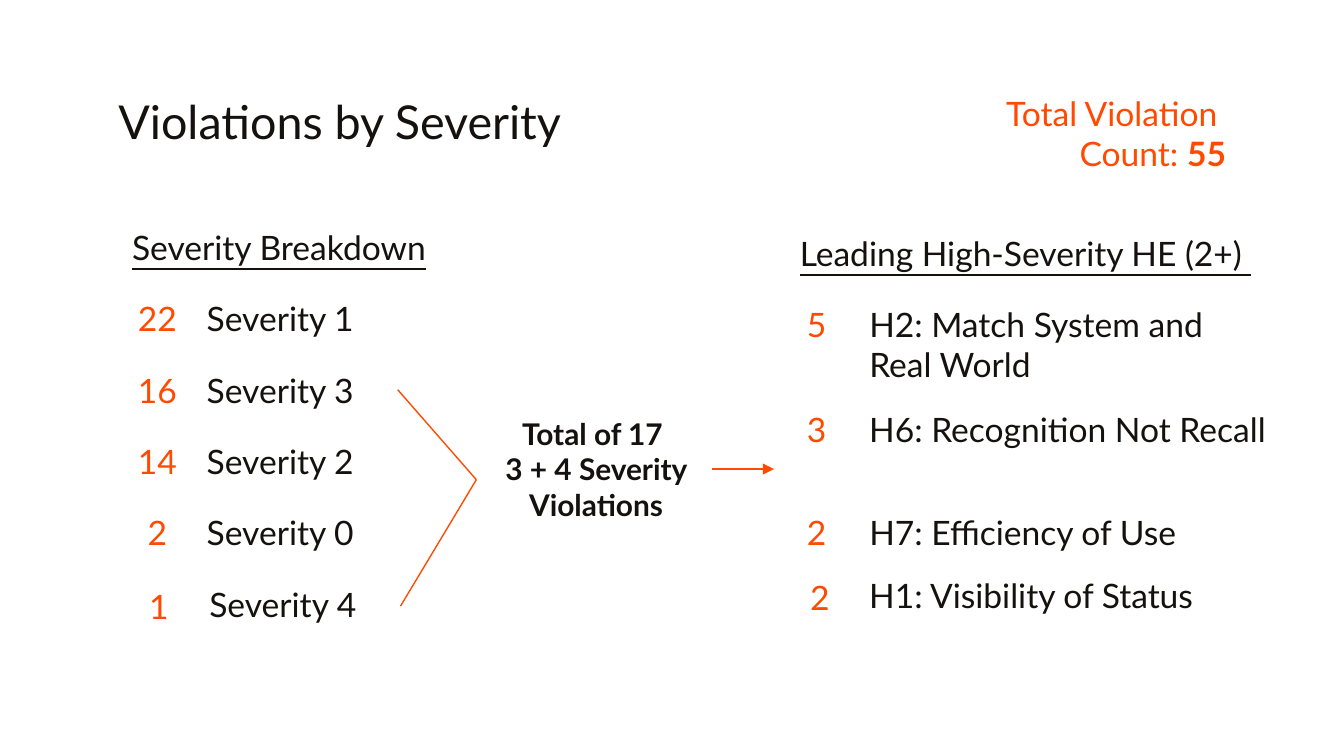
from dataclasses import dataclass

from lxml.etree import SubElement
from pptx import Presentation
from pptx.dml.color import RGBColor
from pptx.enum.shapes import MSO_CONNECTOR
from pptx.enum.text import MSO_ANCHOR, MSO_AUTO_SIZE, PP_ALIGN
from pptx.oxml.ns import qn
from pptx.util import Pt


@dataclass(frozen=True)
class Theme:
    font: str = "Lato"
    ink: RGBColor = RGBColor(0x15, 0x11, 0x0E)
    accent: RGBColor = RGBColor(0xFF, 0x4A, 0x00)
    title: float = 25
    body: float = 18
    note: float = 16
    inset: float = 7.2
    line: float = 0.75


class Deck:
    """Holds the theme and the current slide; all lengths are in points."""

    def __init__(self, prs, theme):
        self.theme = theme
        self.s = prs.slides.add_slide(prs.slide_layouts[5])

    def fill_text(self, sp, paragraphs, align=PP_ALIGN.LEFT, size=None, **font):
        """Each paragraph is a list of (text, bold) runs."""
        t = self.theme
        tf = sp.text_frame
        frame = {"word_wrap": True, "auto_size": MSO_AUTO_SIZE.NONE,
                 "vertical_anchor": MSO_ANCHOR.TOP}
        frame |= {f"margin_{side}": Pt(t.inset)
                  for side in ("left", "top", "right", "bottom")}
        for name, value in frame.items():
            setattr(tf, name, value)
        color = font.pop("color", t.ink)
        for i, runs in enumerate(paragraphs):
            p = tf.add_paragraph() if i else tf.paragraphs[0]
            p.alignment = align
            for text, bold in runs:
                r = p.add_run()
                r.text = text
                style = {"name": t.font, "size": Pt(size or t.body), "bold": bold}
                for name, value in (style | font).items():
                    setattr(r.font, name, value)
                r.font.color.rgb = color

    def title(self, text, x, y, w, h):
        sp = self.s.shapes.title
        box = {"left": x, "top": y, "width": w, "height": h}
        for name, value in box.items():
            setattr(sp, name, Pt(value))
        self.fill_text(sp, [[(text, False)]], size=self.theme.title)

    def text(self, paragraphs, x, y, w, h, **style):
        sp = self.s.shapes.add_textbox(Pt(x), Pt(y), Pt(w), Pt(h))
        self.fill_text(sp, paragraphs, **style)

    def heading(self, text, x, y, w):
        self.text([[(text, False)]], x, y, w, 43.2,
                  align=PP_ALIGN.CENTER, underline=True)

    def count_row(self, count, label, count_x, label_x, y, label_w, dx=0, dy=0):
        """A coloured count and its label; dx and dy nudge the count."""
        self.text([[(count, False)]], count_x + dx, y + dy, 42.5, 58.3,
                  align=PP_ALIGN.CENTER, color=self.theme.accent)
        self.text([[(label, False)]], label_x, y, label_w, 58.3)

    def line(self, x1, y1, x2, y2, arrow=False):
        cx = self.s.shapes.add_connector(
            MSO_CONNECTOR.STRAIGHT, Pt(x1), Pt(y1), Pt(x2), Pt(y2))
        cx.line.color.rgb = self.theme.accent
        cx.line.width = Pt(self.theme.line)
        if arrow:
            SubElement(cx.line._get_or_add_ln(), qn("a:tailEnd"), type="triangle")
        SubElement(cx._element.spPr, qn("a:effectLst"))


def main():
    prs = Presentation()
    prs.slide_width, prs.slide_height = Pt(720), Pt(405)
    theme = Theme()
    deck = Deck(prs, theme)

    # Title and total
    deck.title("Violations by Severity", 56.2, 42.5, 607.7, 43.2)
    deck.text([[("Total Violation ", False)], [("Count: ", False), ("55", True)]],
              434.9, 42.5, 229, 58.3, align=PP_ALIGN.RIGHT, color=theme.accent)

    # Severity breakdown
    deck.heading("Severity Breakdown", 20.2, 114.5, 258.5)
    severities = [("22", 1), ("16", 3), ("14", 2), ("2", 0), ("1", 4)]
    for i, (count, level) in enumerate(severities):
        nudge = 1.4 if i == len(severities) - 1 else 0
        deck.count_row(count, f"Severity {level}", 63.1 + nudge / 2,
                       103.7 + nudge, 152.6 + 38.2 * i, 200, dy=nudge)

    # Bracket from severities 3 and 4 to their total
    tip = (255.2, 257)
    deck.line(213.1, 208.8, *tip)
    deck.line(214.6, 324.7, *tip)
    deck.text([[("Total of 17 ", True)], [("3 + 4 Severity Violations", True)]],
              236.9, 215.3, 164.9, 50.4, align=PP_ALIGN.CENTER, size=theme.note)
    deck.line(381.6, 251.3, 414.7, 251.3, arrow=True)

    # Leading high-severity heuristics
    deck.heading("Leading High-Severity HE (2+) ", 404.6, 117.4, 289.4)
    heuristics = [
        ("5", "H2: Match System and Real World", 155.5, 205.2, 0),
        ("3", "H6: Recognition Not Recall", 211.7, 240.5, 0),
        ("2", "H7: Efficiency of Use", 267.1, 205.2, 0),
        ("2", "H1: Visibility of Status", 301, 223.2, 1.8),
    ]
    for count, label, y, w, dx in heuristics:
        deck.count_row(count, label, 416.2, 458.6, y, w, dx=dx, dy=dx / 3)

    prs.save("out.pptx")


if __name__ == "__main__":
    main()
